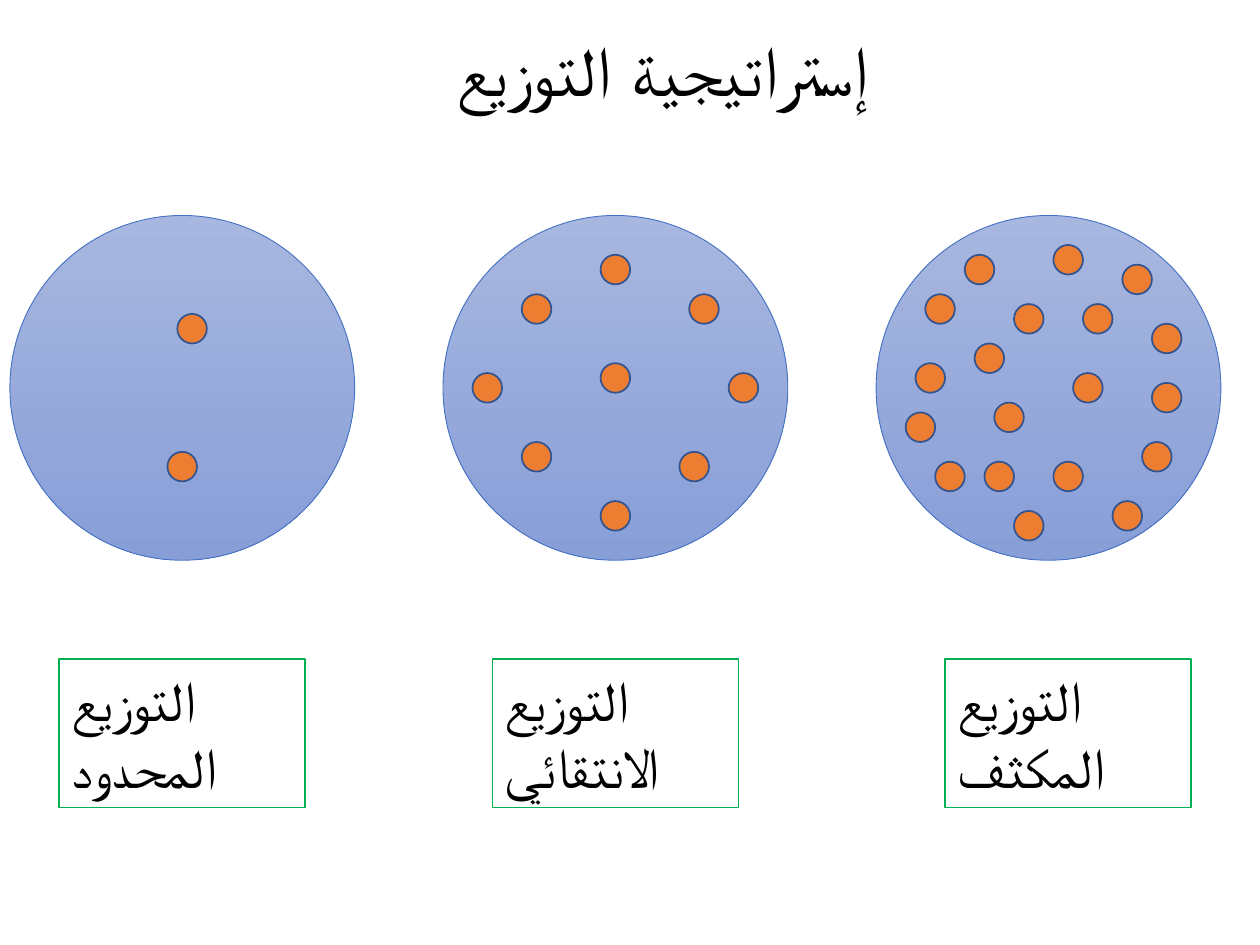
import pptx
import pptx.dml.color
import pptx.enum.shapes
import pptx.enum.text
import pptx.oxml.ns
import pptx.util
from lxml import etree

Pt = pptx.util.Pt
RGBColor = pptx.dml.color.RGBColor
SHAPES = pptx.enum.shapes.MSO_SHAPE
qn = pptx.oxml.ns.qn

MARKET_TOP_COLOR = RGBColor(0xA8, 0xB7, 0xDF)
MARKET_BOTTOM_COLOR = RGBColor(0x88, 0x9E, 0xD7)
MARKET_LINE = RGBColor(0x44, 0x72, 0xC4)
OUTLET_FILL = RGBColor(0xED, 0x7D, 0x31)
OUTLET_LINE = RGBColor(0x32, 0x54, 0x91)
LABEL_LINE = RGBColor(0x00, 0xB0, 0x50)
WHITE = RGBColor(0xFF, 0xFF, 0xFF)
BLACK = RGBColor(0x00, 0x00, 0x00)

STEP = 5.63  # outlets sit on a grid of this many points
MARKET_LEFT, MARKET_TOP, MARKET_PITCH = 5.63, 123.1, 247.5
MARKET_SIZE, OUTLET_SIZE = 35 * STEP, 3 * STEP
LABEL_TOP, LABEL_WIDTH, LABEL_HEIGHT = 376.5, 140.6, 85

# Label, label's left edge, outlets as (column, row) inside the market circle
MARKETS = [
    ("التوزيع المحدود", 33.8, [(17, 10), (16, 24)]),
    ("التوزيع الانتقائي", 281.3,
     [(16, 4), (16, 29), (29, 16), (3, 16), (8, 8), (16, 15), (24, 24),
      (25, 8), (8, 23)]),
    ("التوزيع المكثف", 540,
     [(18, 3), (21, 9), (9, 4), (25, 5), (14, 9), (5, 8), (4, 15), (28, 11),
      (28, 17), (20, 16), (12, 19), (18, 25), (3, 20), (6, 25), (11, 25),
      (14, 30), (24, 29), (27, 23), (10, 13)]),
]


def add_shape(page, kind, left, top, width, height, line_color, line_width):
    shape = page.shapes.add_shape(kind, Pt(left), Pt(top), Pt(width), Pt(height))
    shape.shadow.inherit = False
    shape.line.color.rgb = line_color
    shape.line.width = Pt(line_width)
    return shape


def add_market(page, left):
    market = add_shape(page, SHAPES.OVAL, left, MARKET_TOP, MARKET_SIZE,
                       MARKET_SIZE, MARKET_LINE, 0.5)
    market.fill.gradient()
    market.fill.gradient_angle = 270
    colors = (MARKET_TOP_COLOR, MARKET_BOTTOM_COLOR)
    for stop, color, position in zip(market.fill.gradient_stops, colors, (0, 1)):
        stop.color.rgb = color
        stop.position = position


def add_outlet(page, market_left, column, row):
    outlet = add_shape(page, SHAPES.OVAL, market_left + column * STEP,
                       MARKET_TOP + row * STEP, OUTLET_SIZE, OUTLET_SIZE,
                       OUTLET_LINE, 1)
    outlet.fill.solid()
    outlet.fill.fore_color.rgb = OUTLET_FILL


def write_text(box, text, size, alignment):
    frame = box.text_frame
    frame.text = text
    frame.word_wrap = True
    frame.auto_size = pptx.enum.text.MSO_AUTO_SIZE.SHAPE_TO_FIT_TEXT
    frame.vertical_anchor = pptx.enum.text.MSO_ANCHOR.TOP
    para = frame.paragraphs[0]
    para.alignment = alignment
    span = para.runs[0]
    span.font.size = Pt(size)
    span.font.name = "Arial"
    span.font.color.rgb = BLACK
    # Arabic letters take the complex-script font
    etree.SubElement(span.font._element, qn("a:cs"), typeface="Arial")
    return para


def add_label(page, text, left):
    label = add_shape(page, SHAPES.RECTANGLE, left, LABEL_TOP, LABEL_WIDTH,
                      LABEL_HEIGHT, LABEL_LINE, 0)
    label.fill.solid()
    label.fill.fore_color.rgb = WHITE
    write_text(label, text, 32, pptx.enum.text.PP_ALIGN.LEFT)


def add_title(page, text):
    title = page.shapes.add_textbox(Pt(193), Pt(11.5), Pt(336), Pt(55.4))
    para = write_text(title, text, 40, pptx.enum.text.PP_ALIGN.CENTER)
    properties = para._p.get_or_add_pPr()
    properties.set("marL", "0")
    properties.set("indent", str(Pt(35.3)))


def main():
    deck = pptx.Presentation()
    deck.slide_width, deck.slide_height = Pt(720), Pt(540)
    page = deck.slides.add_slide(deck.slide_layouts[6])
    for index, (label, label_left, outlets) in enumerate(MARKETS):
        market_left = MARKET_LEFT + index * MARKET_PITCH
        add_market(page, market_left)
        for column, row in outlets:
            add_outlet(page, market_left, column, row)
        add_label(page, label, label_left)
    add_title(page, "إستراتيجية التوزيع")
    deck.save("out.pptx")


if __name__ == "__main__":
    main()
